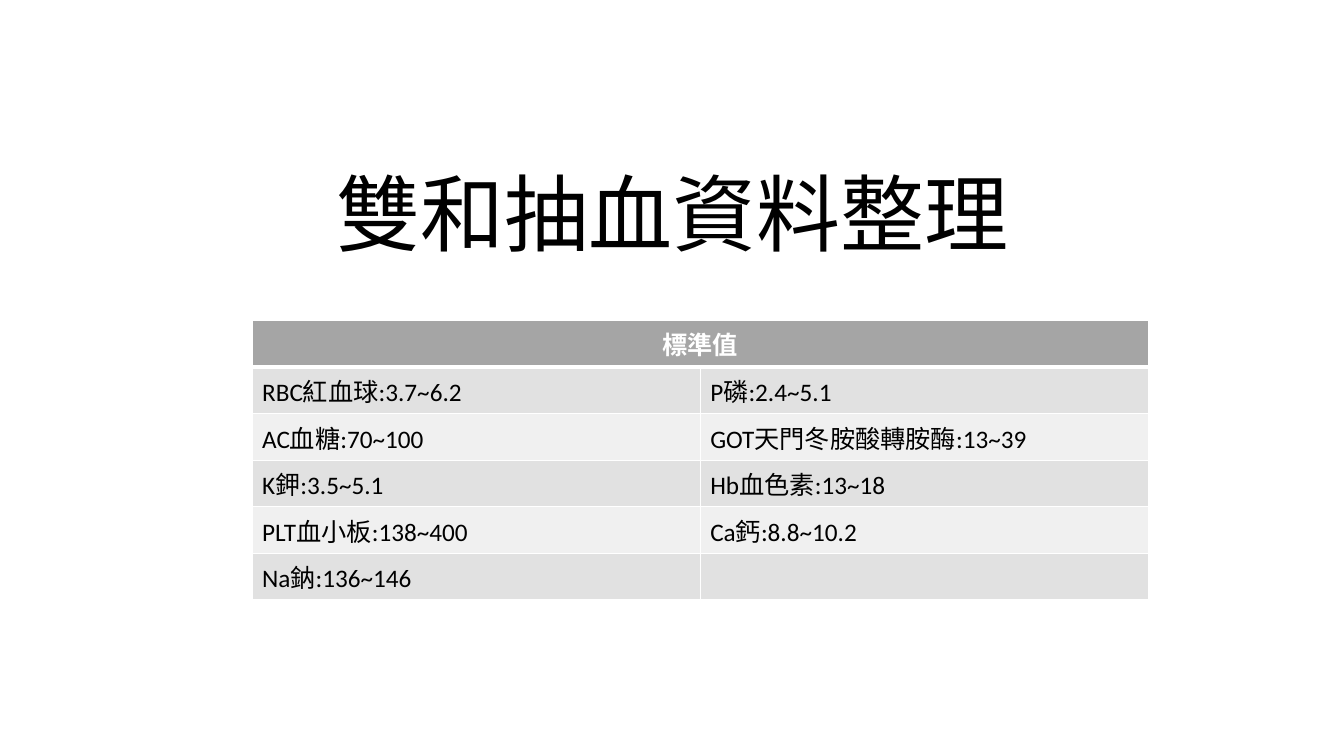
from lxml import etree
from pptx import Presentation
from pptx.dml.color import RGBColor
from pptx.enum.text import MSO_ANCHOR, MSO_AUTO_SIZE, PP_ALIGN
from pptx.oxml.ns import qn
from pptx.util import Inches, Pt

CENTER, LEFT = PP_ALIGN.CENTER, PP_ALIGN.LEFT
TITLE_ONLY = 5
FONT = "Calibri"
COLORS = {
    "text": "000000",
    "white": "FFFFFF",
    "header": "A5A5A5",
    "odd": "E1E1E1",
    "even": "F0F0F0",
}

TITLE = "雙和抽血資料整理"
HEADING = "標準值"
STANDARDS = [
    ("RBC紅血球:3.7~6.2", "P磷:2.4~5.1"),
    ("AC血糖:70~100", "GOT天門冬胺酸轉胺酶:13~39"),
    ("K鉀:3.5~5.1", "Hb血色素:13~18"),
    ("PLT血小板:138~400", "Ca鈣:8.8~10.2"),
    ("Na鈉:136~146", ""),
]


def rgb(name):
    return RGBColor.from_string(COLORS[name])


def write(paragraph, text, size, color, align, bold=False):
    paragraph.alignment = align
    paragraph.font.size = Pt(size)
    if text:
        run = paragraph.add_run()
        run.text = text
        run.font.name = FONT
        run.font.size = Pt(size)
        run.font.bold = bold
        run.font.color.rgb = rgb(color)


def add_border(cell, side, points):
    line = etree.SubElement(cell._tc.get_or_add_tcPr(), qn(f"a:ln{side}"), w=str(Pt(points)))
    fill = etree.SubElement(line, qn("a:solidFill"))
    etree.SubElement(fill, qn("a:srgbClr"), val=COLORS["white"])


def style_cell(cell, row):
    widths = {"L": 1, "R": 1, "T": 3 if row == 1 else 1, "B": 3 if row == 0 else 1}
    for side, points in widths.items():
        add_border(cell, side, points)
    cell.fill.solid()
    cell.fill.fore_color.rgb = rgb("header" if row == 0 else "odd" if row % 2 else "even")


def add_title(slide):
    title = slide.shapes.title
    title.left, title.top = Inches(1.67), Inches(0.06)
    title.width, title.height = Inches(10), Inches(2.61)
    frame = title.text_frame
    frame.word_wrap = True
    frame.auto_size = MSO_AUTO_SIZE.NONE
    frame.vertical_anchor = MSO_ANCHOR.BOTTOM
    paragraph = frame.paragraphs[0]
    paragraph.line_spacing = 0.9
    write(paragraph, TITLE, 60, "text", CENTER)


def add_standards(slide):
    rows = [(HEADING, "")] + STANDARDS
    table = slide.shapes.add_table(
        len(rows), 2, Inches(2.5), Inches(3.18), Inches(8.89), Inches(2.43)
    ).table
    for r, texts in enumerate(rows):
        for c, text in enumerate(texts):
            cell = table.cell(r, c)
            style_cell(cell, r)
            paragraph = cell.text_frame.paragraphs[0]
            if r == 0:
                write(paragraph, text, 18, "white", CENTER, bold=True)
            else:
                write(paragraph, text, 18, "text", LEFT)
    table.cell(0, 0).merge(table.cell(0, 1))


def main():
    deck = Presentation()
    deck.slide_width, deck.slide_height = Inches(13.33), Inches(7.5)
    slide = deck.slides.add_slide(deck.slide_layouts[TITLE_ONLY])
    add_title(slide)
    add_standards(slide)
    deck.save("out.pptx")


if __name__ == "__main__":
    main()
